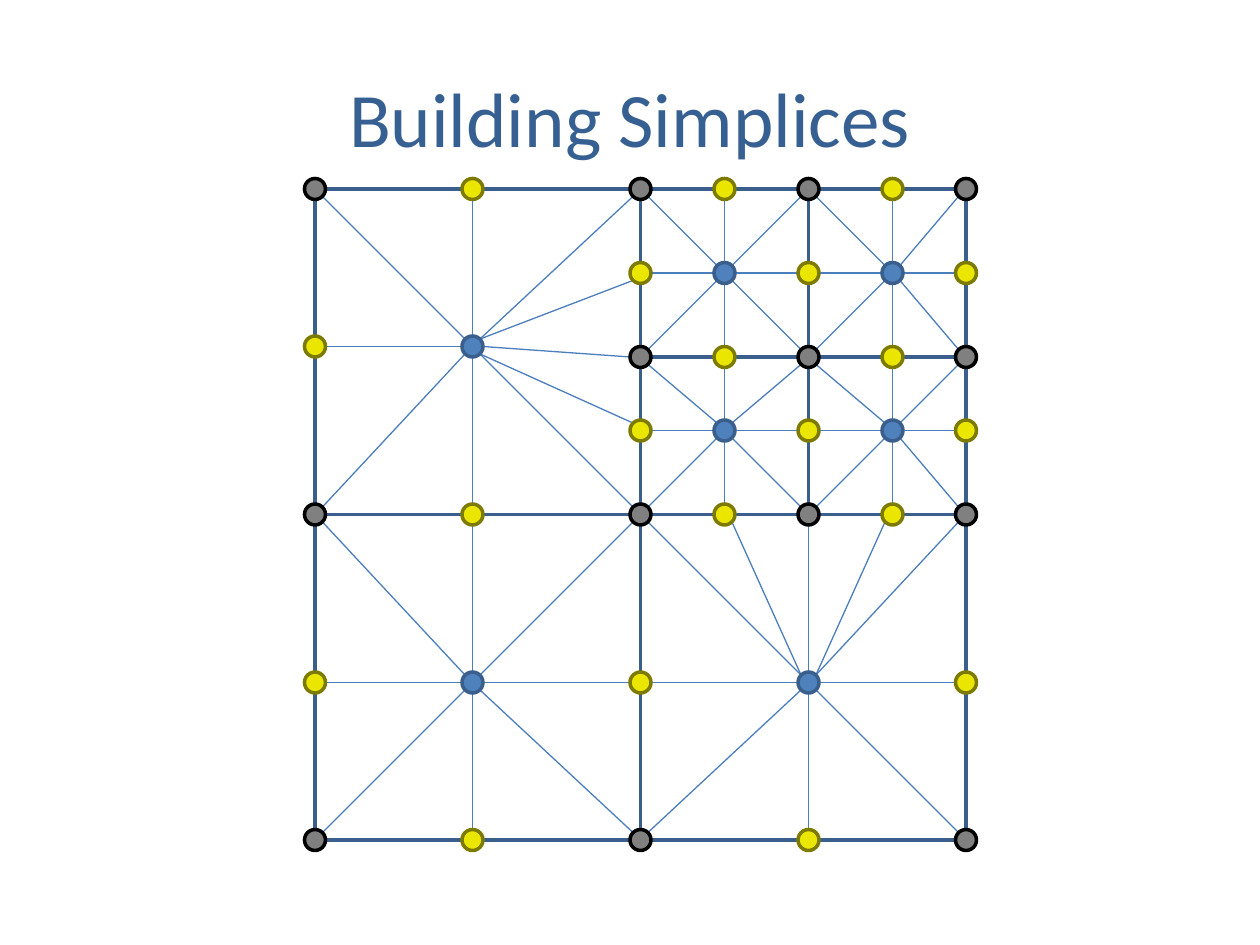
"""Build a slide of a refined grid whose cells are fanned into simplices."""
from math import sqrt
from pptx import Presentation
from pptx.dml.color import RGBColor as RGB
from pptx.enum.shapes import MSO_CONNECTOR as Conn, MSO_SHAPE as Kind
from pptx.enum.text import MSO_ANCHOR as Anchor, PP_ALIGN as Align
from pptx.oxml.ns import qn
from pptx.util import Pt

COLOR = {"title": "376092", "edge": "3A5F8C", "fan": "4B7EBC", "hub": "4F81BD",
         "corner": "808080", "rim": "000000", "mid": "EBE600", "olive": "7D7A00"}
RAD = 6
CELLS = [
    (180, 108, 366, 294, 270, 198),
    (180, 294, 366, 480, 270, 390),
    (366, 294, 552, 480, 462, 390),
    (366, 108, 462, 204, 414, 156),
    (366, 204, 462, 294, 414, 246),
    (462, 108, 552, 204, 510, 156),
    (462, 204, 552, 294, 510, 246),
]

deck = Presentation()
deck.slide_width, deck.slide_height = Pt(720), Pt(540)
slide = deck.slides.add_slide(deck.slide_layouts[5])
shapes = slide.shapes

title = shapes.title
place = {"left": 36, "top": 21.6, "width": 648, "height": 90}
for key, value in place.items():
    setattr(title, key, Pt(value))
title.text_frame.text = "Building Simplices"
title.text_frame.vertical_anchor = Anchor.MIDDLE
para = title.text_frame.paragraphs[0]
para.alignment = Align.CENTER
font = para.runs[0].font
for key, value in {"name": "Calibri", "size": Pt(44)}.items():
    setattr(font, key, value)
font.color.rgb = RGB.from_string(COLOR["title"])


def draw(kind, x, y, wide, high, line, fill=None):
    """Add an outlined shape, filled when a fill is named."""
    shape = shapes.add_shape(kind, Pt(x), Pt(y), Pt(wide), Pt(high))
    shape.shadow.inherit = False
    shape.line.width = Pt(2)
    shape.line.color.rgb = RGB.from_string(COLOR[line])
    if fill:
        shape.fill.solid()
        shape.fill.fore_color.rgb = RGB.from_string(COLOR[fill])
    else:
        shape.fill.background()


def step(start, end):
    """Give the offset to the nearest of a dot's eight rim points."""
    signs = [0 if abs(b - a) <= RAD else (1 if b > a else -1)
             for a, b in zip(start, end)]
    size = RAD / sqrt(2) if all(signs) else RAD
    return [sign * size for sign in signs]


corners, mids, hubs = set(), set(), set()
for left, top, right, bottom, x, y in CELLS:
    draw(Kind.RECTANGLE, left, top, right - left, bottom - top, "edge")
    corners |= {(a, b) for a in (left, right) for b in (top, bottom)}
    mids |= {(left, y), (right, y), (x, top), (x, bottom)}
    hubs.add((x, y))
mids -= corners | {(366, 198)}

for left, top, right, bottom, *hub in CELLS:
    for node in sorted(corners | mids):
        x, y = node
        inside = left <= x <= right and top <= y <= bottom
        if not inside or (x not in (left, right) and y not in (top, bottom)):
            continue
        dx, dy = step(hub, node)
        ends = (hub[0] + dx, hub[1] + dy, x - dx, y - dy)
        line = shapes.add_connector(Conn.STRAIGHT, *map(Pt, ends))
        line.line.width = Pt(0.75)
        line.line.color.rgb = RGB.from_string(COLOR["fan"])
        props = line._element.spPr
        props.append(props.makeelement(qn("a:effectLst"), {}))

for dots, rim, fill in ((hubs, "edge", "hub"), (corners, "rim", "corner"),
                        (mids, "olive", "mid")):
    for x, y in sorted(dots):
        draw(Kind.OVAL, x - RAD, y - RAD, 2 * RAD, 2 * RAD, rim, fill)

deck.save("out.pptx")
